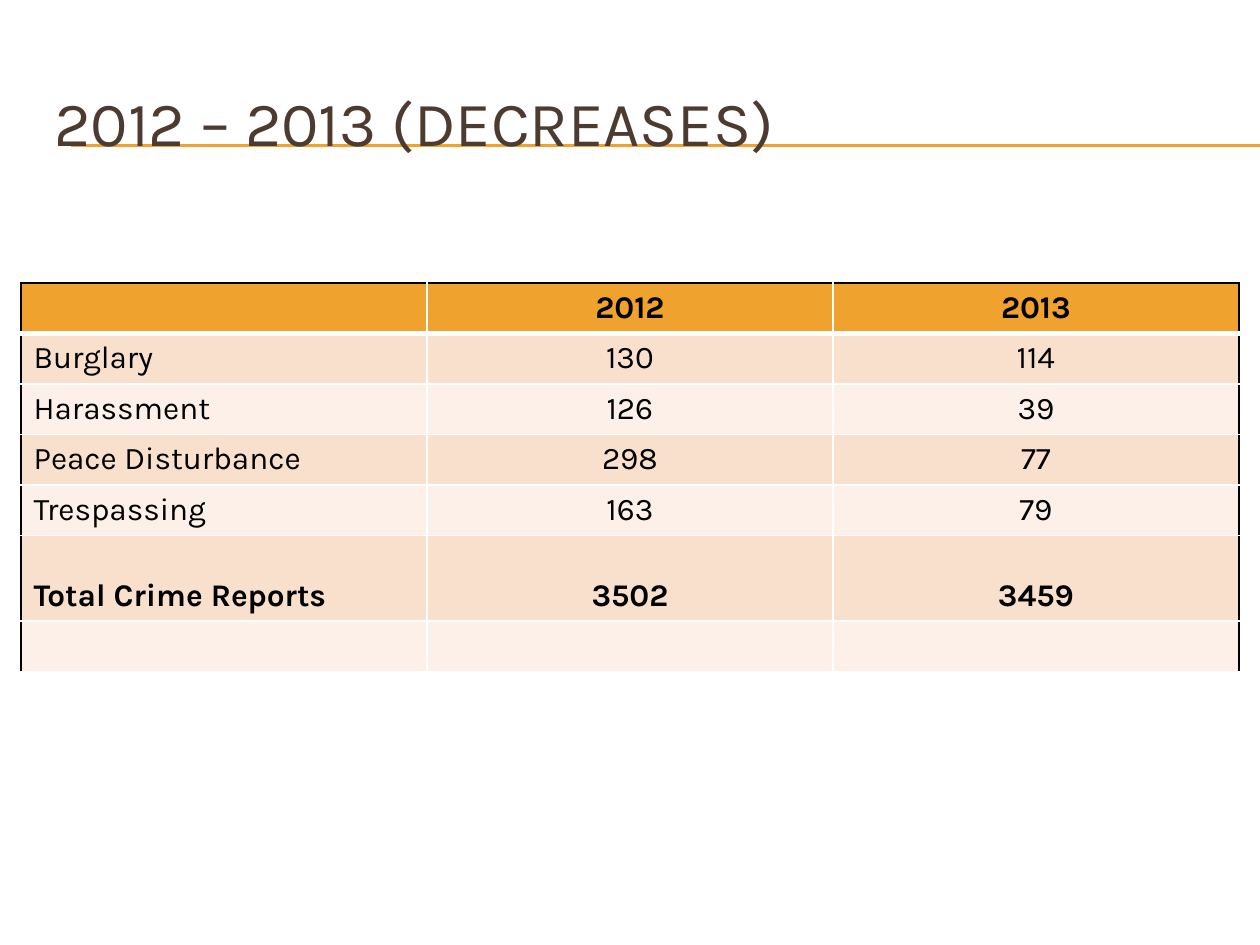
from dataclasses import dataclass

from lxml.etree import SubElement
from pptx import Presentation
from pptx.dml.color import RGBColor
from pptx.enum.shapes import MSO_CONNECTOR
from pptx.enum.text import MSO_ANCHOR, PP_ALIGN
from pptx.oxml.ns import qn
from pptx.util import Emu, Pt

EMU_PER_PIXEL = 914400 // 126


def px(length):
    return Emu(length * EMU_PER_PIXEL)


@dataclass(frozen=True)
class Theme:
    font: str = "Karla"
    title_size: int = 36
    table_size: int = 18
    title: str = "4E3B30"
    text: str = "000000"
    accent: str = "F0A22E"
    bands: tuple = ("F9E0CD", "FCF0E8")
    grid: str = "FFFFFF"
    edge: str = "000000"


class SlideBuilder:
    def __init__(self, slide, theme):
        self.slide = slide
        self.theme = theme

    def format_runs(self, paragraph, size, color, bold=False):
        for run in paragraph.runs:
            run.font.name = self.theme.font
            run.font.size = Pt(size)
            run.font.bold = bold
            run.font.color.rgb = RGBColor.from_string(color)

    def rule(self, left, right, y):
        connector = self.slide.shapes.add_connector(
            MSO_CONNECTOR.STRAIGHT, px(left), px(y), px(right), px(y))
        connector.line.color.rgb = RGBColor.from_string(self.theme.accent)
        connector.line.width = Pt(0.75)
        SubElement(connector._element.spPr, qn("a:effectLst"))

    def title(self, text, left, top, width, height):
        box = self.slide.shapes.add_textbox(px(left), px(top), px(width), px(height))
        text_frame = box.text_frame
        text_frame.word_wrap = True
        text_frame.vertical_anchor = MSO_ANCHOR.MIDDLE
        text_frame.text = text
        self.format_runs(text_frame.paragraphs[0], self.theme.title_size, self.theme.title)

    def border(self, cell, side, color, width):
        line = SubElement(cell._tc.get_or_add_tcPr(), qn(f"a:ln{side}"), w=str(Pt(width)))
        fill = SubElement(line, qn("a:solidFill"))
        SubElement(fill, qn("a:srgbClr"), val=color)

    def cell(self, cell, text, fill, borders, bold, centered):
        for side, (color, width) in borders.items():
            self.border(cell, side, color, width)
        cell.fill.solid()
        cell.fill.fore_color.rgb = RGBColor.from_string(fill)
        cell.text_frame.text = text
        paragraph = cell.text_frame.paragraphs[0]
        paragraph.alignment = PP_ALIGN.CENTER if centered else PP_ALIGN.LEFT
        self.format_runs(paragraph, self.theme.table_size, self.theme.text, bold)

    def table(self, rows, heights, bold_rows, left, top, width):
        theme = self.theme
        last_column = len(rows[0]) - 1
        frame = self.slide.shapes.add_table(
            len(rows), len(rows[0]), px(left), px(top), px(width), px(sum(heights)))
        table = frame.table
        table.first_row = table.horz_banding = False
        for row_index, values in enumerate(rows):
            table.rows[row_index].height = px(heights[row_index])
            fill = theme.bands[(row_index - 1) % 2] if row_index else theme.accent
            for column_index, value in enumerate(values):
                borders = {
                    "L": (theme.grid if column_index else theme.edge, 1),
                    "R": (theme.edge if column_index == last_column else theme.grid, 1),
                    "T": (theme.grid, 3 if row_index == 1 else 1) if row_index else (theme.edge, 1),
                    "B": (theme.grid, 1 if row_index else 3),
                }
                cell = table.cell(row_index, column_index)
                self.cell(cell, value, fill, borders, row_index in bold_rows, column_index > 0)
                if heights[row_index] > min(heights):
                    cell.vertical_anchor = MSO_ANCHOR.BOTTOM


def main():
    presentation = Presentation()
    presentation.slide_width = px(1260)
    presentation.slide_height = px(945)
    slide = presentation.slides.add_slide(presentation.slide_layouts[6])
    builder = SlideBuilder(slide, Theme())

    for y in (145, 146):
        builder.rule(71, 1260, y)
    builder.title("2012 – 2013 (DECREASES)", 42, 63, 1197, 116)

    crime_reports = [
        ("", "2012", "2013"),
        ("Burglary", "130", "114"),
        ("Harassment", "126", "39"),
        ("Peace Disturbance", "298", "77"),
        ("Trespassing", "163", "79"),
        ("Total Crime Reports", "3502", "3459"),
        ("", "", ""),
    ]
    total_row = 5
    heights = [86 if index == total_row else 49 for index in range(len(crime_reports))]
    builder.table(crime_reports, heights, (0, total_row), 21, 283, 1218)

    presentation.save("out.pptx")


if __name__ == "__main__":
    main()
